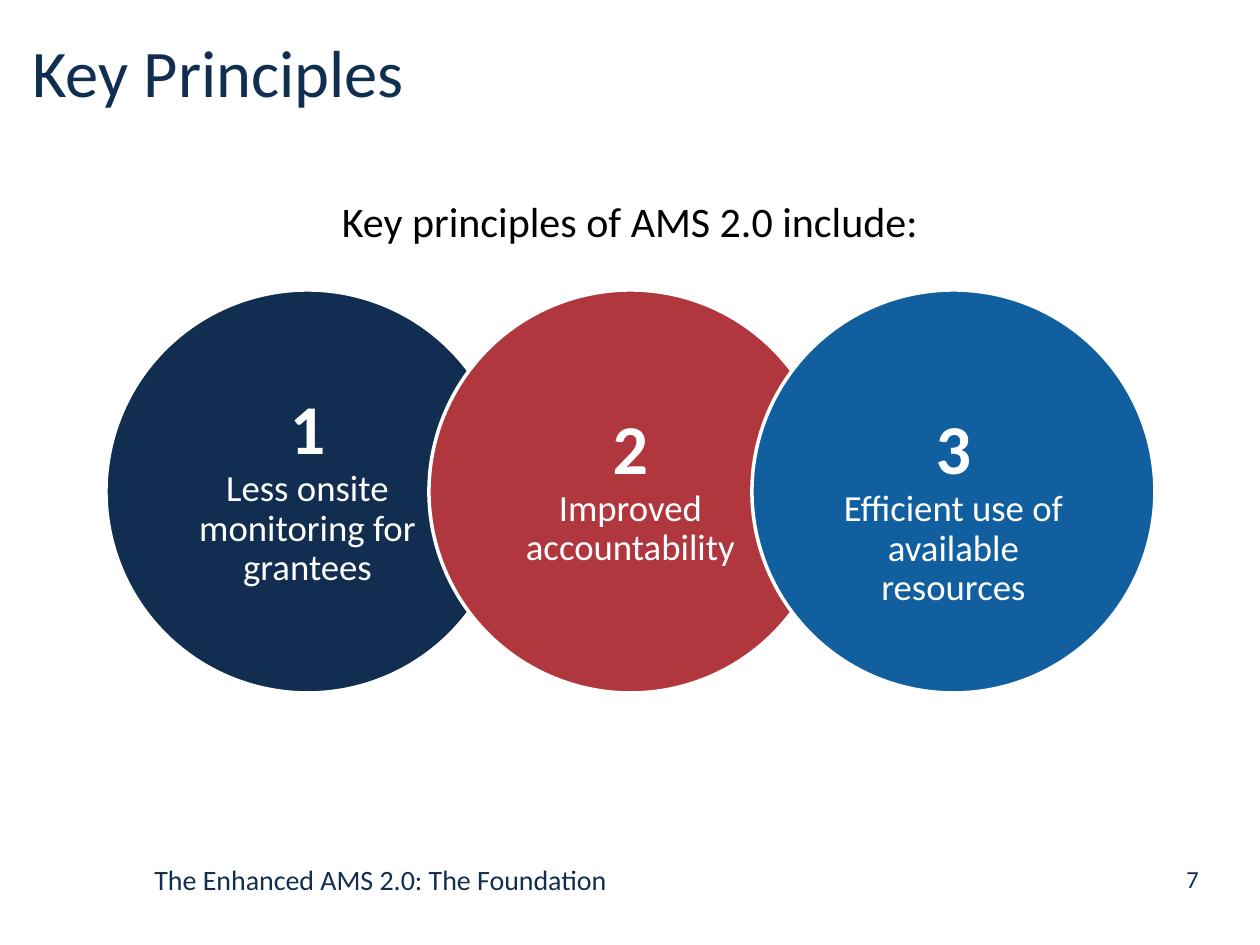
from dataclasses import dataclass

import pptx
import pptx.dml.color
import pptx.enum.shapes
import pptx.enum.text
import pptx.util

RGBColor = pptx.dml.color.RGBColor
PP_ALIGN = pptx.enum.text.PP_ALIGN
MSO_ANCHOR = pptx.enum.text.MSO_ANCHOR

NAVY = RGBColor(0x11, 0x2E, 0x51)
TITLE_NAVY = RGBColor(0x10, 0x2E, 0x50)
RED = RGBColor(0xB1, 0x37, 0x3E)
BLUE = RGBColor(0x11, 0x5F, 0x9F)
WHITE = RGBColor(0xFF, 0xFF, 0xFF)
BLACK = RGBColor(0x00, 0x00, 0x00)

FONT = "Calibri"
PX_PER_INCH = 126

# Overlapping row of circles
CIRCLE_LEFT, CIRCLE_TOP = 106, 290
DIAMETER, STEP = 403, 323
SIDE_INSET, END_INSET = 23, 4


@dataclass(frozen=True)
class Principle:
    number: str
    text: str
    fill: RGBColor
    drop: int = 0  # extra space above the text, in px


PRINCIPLES = [
    Principle("1", "Less onsite monitoring for grantees", NAVY),
    Principle("2", "Improved accountability", RED),
    Principle("3", "Efficient use of available resources", BLUE, drop=40),
]


def px(n: int) -> pptx.util.Emu:
    return pptx.util.Emu(round(n * 914400 / PX_PER_INCH))


def place(sp, left: int, top: int, width: int, height: int) -> None:
    sp.left, sp.top, sp.width, sp.height = map(px, (left, top, width, height))


def add_text(p, text: str, *, size: int, color: RGBColor, bold: bool = False,
             align=PP_ALIGN.LEFT) -> None:
    p.alignment = align
    r = p.add_run()
    r.text = text
    r.font.name = FONT
    r.font.size = pptx.util.Pt(size)
    r.font.bold = bold
    r.font.color.rgb = color


def add_label(slide, box: tuple[int, int, int, int], text: str,
              anchor=MSO_ANCHOR.TOP, **fmt) -> None:
    sp = slide.shapes.add_textbox(*map(px, box))
    tf = sp.text_frame
    tf.word_wrap = True
    tf.vertical_anchor = anchor
    add_text(tf.paragraphs[0], text, **fmt)


def add_circle(slide, left: int, item: Principle) -> None:
    sp = slide.shapes.add_shape(
        pptx.enum.shapes.MSO_SHAPE.OVAL,
        px(left), px(CIRCLE_TOP), px(DIAMETER), px(DIAMETER))
    sp.shadow.inherit = False
    sp.fill.solid()
    sp.fill.fore_color.rgb = item.fill
    sp.line.color.rgb = WHITE
    sp.line.width = pptx.util.Pt(2)

    tf = sp.text_frame
    tf.word_wrap = True
    tf.vertical_anchor = MSO_ANCHOR.MIDDLE
    tf.margin_left = tf.margin_right = px(SIDE_INSET)
    tf.margin_top = px(END_INSET + item.drop)
    tf.margin_bottom = px(END_INSET)
    p = tf.paragraphs[0]
    p.line_spacing = 0.9
    add_text(p, item.number, size=40, color=WHITE, bold=True,
             align=PP_ALIGN.CENTER)
    p.add_line_break()
    add_text(p, item.text, size=21, color=WHITE, align=PP_ALIGN.CENTER)


def main() -> None:
    prs = pptx.Presentation()
    prs.slide_width, prs.slide_height = px(1260), px(945)
    slide = prs.slides.add_slide(prs.slide_layouts[5])

    # Title
    title = slide.shapes.title
    place(title, 20, 18, 1218, 105)
    tf = title.text_frame
    tf.auto_size = pptx.enum.text.MSO_AUTO_SIZE.NONE
    tf.vertical_anchor = MSO_ANCHOR.MIDDLE
    add_text(tf.paragraphs[0], "Key Principles", size=38, color=TITLE_NAVY)

    # Page number and footer
    add_label(slide, (1140, 849, 105, 59), "7", anchor=MSO_ANCHOR.MIDDLE,
              size=14, color=NAVY, align=PP_ALIGN.CENTER)
    add_label(slide, (142, 856, 914, 50),
              "The Enhanced AMS 2.0: The Foundation", size=16, color=NAVY)

    # Principles
    for i, item in enumerate(PRINCIPLES):
        add_circle(slide, CIRCLE_LEFT + i * STEP, item)

    # Lead-in
    add_label(slide, (131, 189, 998, 63), "Key principles of AMS 2.0 include:",
              size=24, color=BLACK, align=PP_ALIGN.CENTER)

    prs.save("out.pptx")


if __name__ == "__main__":
    main()
